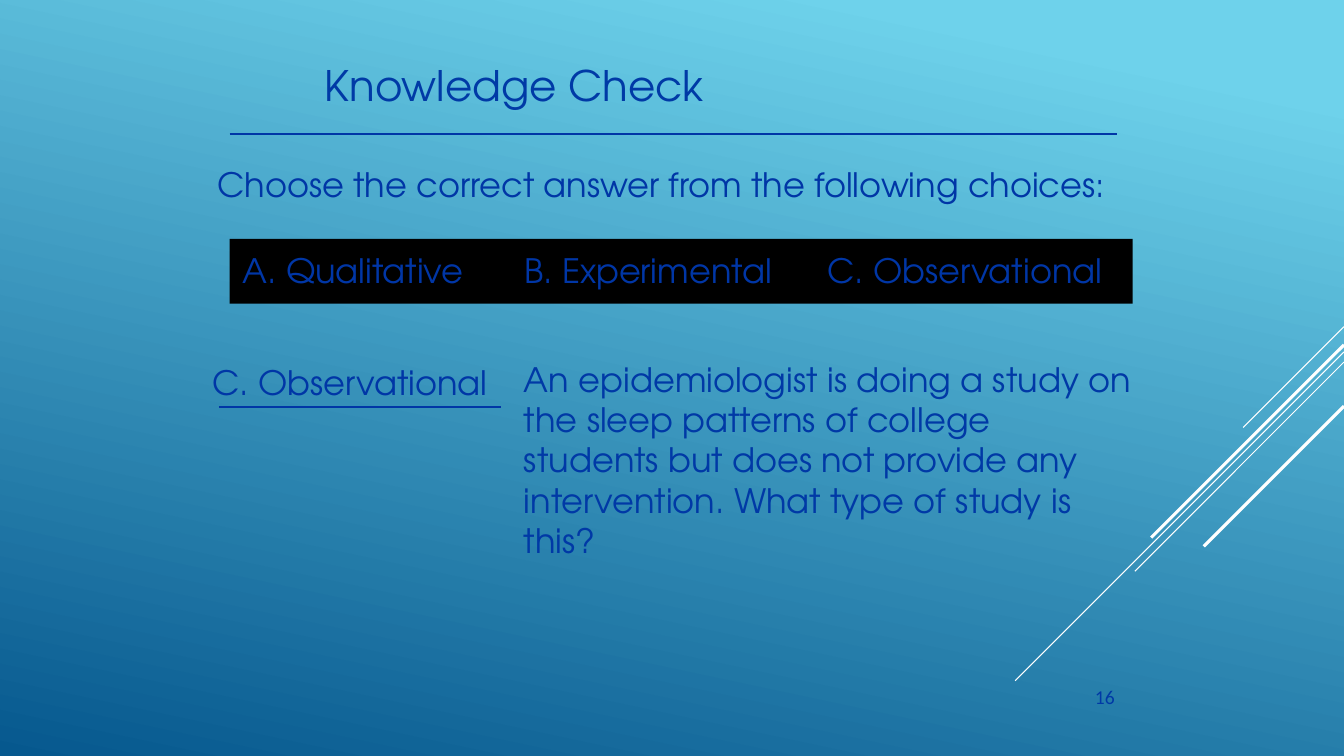
from pptx import Presentation
from pptx.dml.color import RGBColor
from pptx.enum.shapes import MSO_CONNECTOR, MSO_SHAPE
from pptx.enum.text import MSO_ANCHOR, MSO_AUTO_SIZE, PP_ALIGN as Align
from pptx.oxml.ns import qn
from pptx.util import Inches, Pt
from lxml.etree import SubElement

COLUMNS, ROWS = 32, 18
SKY = RGBColor(0x6E, 0xD2, 0xEB)
DEEP = RGBColor(0x06, 0x58, 0x8E)
WHITE = RGBColor(0xFF, 0xFF, 0xFF)
BLACK = RGBColor(0x00, 0x00, 0x00)
BLUE = RGBColor(0x00, 0x36, 0xA6)
TITLE_BLUE = RGBColor(0x00, 0x3A, 0xA6)
QUESTION_BLUE = RGBColor(0x00, 0x39, 0xA6)


class QuizSlide:
    """Draws on one slide; lengths are columns and rows of a 32 by 18 grid."""

    def __init__(self, deck):
        self.slide = deck.slides.add_slide(deck.slide_layouts[5])
        self.column = deck.slide_width / COLUMNS
        self.row = deck.slide_height / ROWS

    def place(self, left, top, width, height):
        return (round(left * self.column), round(top * self.row),
                round(width * self.column), round(height * self.row))

    def background(self, start, end, angle):
        fill = self.slide.background.fill
        fill.gradient()
        fill.gradient_angle = angle
        for stop, color, position in zip(fill.gradient_stops, (start, end), (0.1, 1)):
            stop.color.rgb = color
            stop.position = position

    def line(self, left, top, right, bottom, color, weight):
        ends = self.place(left, top, right, bottom)
        connector = self.slide.shapes.add_connector(MSO_CONNECTOR.STRAIGHT, *ends)
        connector.line.color.rgb = color
        connector.line.width = Pt(weight)
        SubElement(connector._element.spPr, qn("a:effectLst"))

    def bar(self, left, top, width, height, color):
        box = self.slide.shapes.add_shape(
            MSO_SHAPE.RECTANGLE, *self.place(left, top, width, height))
        box.shadow.inherit = False
        box.fill.solid()
        box.fill.fore_color.rgb = color
        box.line.fill.background()

    def title(self, words, *area):
        box = self.slide.shapes.title
        box.left, box.top, box.width, box.height = self.place(*area)
        self.set_words(box, words, color=TITLE_BLUE, size=30)

    def text(self, words, *area, **style):
        box = self.slide.shapes.add_textbox(*self.place(*area))
        self.set_words(box, words, **style)

    def set_words(self, box, words, color=BLUE, size=24, align=Align.LEFT,
                  font="TeX Gyre Adventor"):
        frame = box.text_frame
        frame.text = words
        frame.word_wrap = True
        frame.auto_size = MSO_AUTO_SIZE.NONE
        frame.vertical_anchor = MSO_ANCHOR.TOP
        para = frame.paragraphs[0]
        para.alignment = align
        for span in para.runs:
            span.font.name = font
            span.font.size = Pt(size)
            span.font.color.rgb = color


def main():
    deck = Presentation()
    deck.slide_width, deck.slide_height = Inches(13.33), Inches(7.5)
    page = QuizSlide(deck)
    page.background(SKY, DEEP, 258)

    # Diagonal rays run down at 45 degrees from the right edge
    rays = [(7.78, 2.4, 0.75), (8.38, 7.83, 0.75), (8.62, 4.98, 0.75),
            (8.21, 4.59, 2.25), (9.67, 3.34, 2.25)]
    for top, reach, weight in rays:
        page.line(COLUMNS, top, COLUMNS - reach, top + reach, WHITE, weight)

    page.title("Knowledge Check", 7.49, 1.3, 10.8, 1.46)
    page.line(5.47, 3.19, 26.59, 3.19, BLUE, 1.25)
    page.text("Choose the correct answer from the following choices:",
              4.8, 3.79, 21.89, 1.22, align=Align.CENTER)

    page.bar(5.47, 5.69, 21.5, 1.54, BLACK)
    choices = [("A. Qualitative", 4.44), ("B. Experimental", 11.47),
               ("C. Observational", 19.01)]
    for choice, left in choices:
        page.text(choice, left, 5.83, 7.92, 1.22, align=Align.CENTER)

    page.text("C. Observational", 4.82, 8.5, 7.32, 1.22)
    page.line(5.21, 9.7, 11.93, 9.7, BLUE, 1.25)
    page.text("An epidemiologist is doing a study on the sleep patterns of college "
              "students but does not provide any intervention. What type of study "
              "is this?", 12.24, 8.42, 14.95, 5.09, color=QUESTION_BLUE)
    page.text("16", 21.19, 16.2, 5.59, 0.96, color=QUESTION_BLUE, size=14,
              align=Align.RIGHT, font="Calibri")
    deck.save("out.pptx")


if __name__ == "__main__":
    main()
